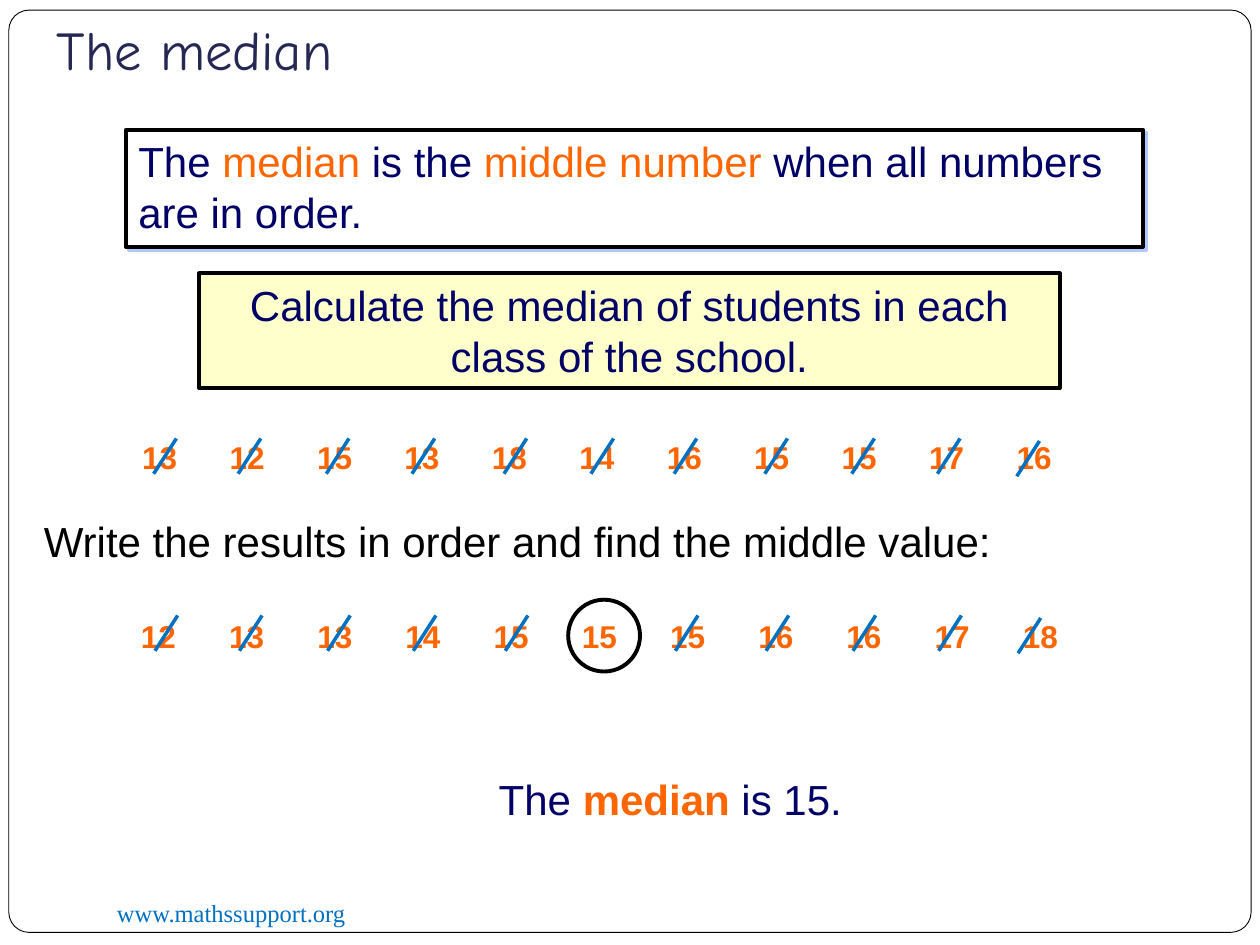
from dataclasses import dataclass
from typing import NamedTuple

from lxml import etree
from pptx import Presentation
from pptx import util as u
from pptx.dml import color
from pptx.enum import shapes, text
from pptx.oxml import ns

COLS, ROWS = 100, 75
WIDE, HIGH = u.Inches(10), u.Inches(7.5)


@dataclass(frozen=True)
class Theme:
    navy: str = "010066"
    orange: str = "FF6600"
    blue: str = "0070C0"
    slate: str = "242852"
    black: str = "000000"
    white: str = "FFFFFF"
    cream: str = "FFFFCC"
    shade: str = "ACCBF9"
    sans: str = "Arial"
    serif: str = "Times New Roman"
    hand: str = "Comic Neue"
    head: float = 31.2
    body: float = 24
    count: float = 18
    foot: float = 14
    edge: float = 2.25
    slash: float = 2
    hair: float = 0.5


T = Theme()


class Box(NamedTuple):
    x: float
    y: float
    w: float
    h: float


class Bit(NamedTuple):
    words: str
    tint: str = T.navy
    size: float = T.body
    face: str = T.sans
    bold: bool = False


class Series(NamedTuple):
    left: float
    top: float
    step: float
    cut: float
    shift: float
    values: tuple


def col(n: float) -> int:
    return round(WIDE * n / COLS)


def row(n: float) -> int:
    return round(HIGH * n / ROWS)


def area(box: Box) -> tuple:
    return col(box.x), row(box.y), col(box.w), row(box.h)


def rgb(tint: str) -> color.RGBColor:
    return color.RGBColor.from_string(tint)


def write(shape, bits: list, align=text.PP_ALIGN.LEFT, wrap: bool = True):
    frame = shape.text_frame
    frame.word_wrap = wrap
    frame.auto_size = text.MSO_AUTO_SIZE.SHAPE_TO_FIT_TEXT
    frame.vertical_anchor = text.MSO_ANCHOR.TOP
    para = frame.paragraphs[0]
    para.alignment = align
    for bit in bits:
        run = para.add_run()
        run.text = bit.words
        font = run.font
        font.name, font.size, font.bold = bit.face, u.Pt(bit.size), bit.bold
        font.color.rgb = rgb(bit.tint)
    return para


def label(slide, box: Box, bits: list, wrap: bool = True):
    return write(slide.shapes.add_textbox(*area(box)), bits, wrap=wrap)


def panel(slide, kind, box: Box, fill: str = "", edge: float = T.edge):
    shape = slide.shapes.add_shape(kind, *area(box))
    shape.shadow.inherit = False
    if fill:
        shape.fill.solid()
        shape.fill.fore_color.rgb = rgb(fill)
    else:
        shape.fill.background()
    shape.line.color.rgb = rgb(T.black)
    shape.line.width = u.Pt(edge)
    return shape


def cast(shape) -> None:
    effect = shape.element.spPr.find(ns.qn("a:effectLst"))
    outer = etree.SubElement(effect, ns.qn("a:outerShdw"), dist=str(u.Pt(2.8)),
                             dir="2700000", algn="ctr", rotWithShape="0")
    etree.SubElement(outer, ns.qn("a:srgbClr"), val=T.shade)


def number(value: str) -> Bit:
    return Bit(value, T.orange, T.count, bold=True)


def tabbed(slide, series: Series) -> None:
    box = Box(series.left, series.top, 74.7, 3.7)
    para = label(slide, box, [number("\t".join(series.values))])
    para.line_spacing = 0.9
    stops = etree.SubElement(para._p.get_or_add_pPr(), ns.qn("a:tabLst"))
    for i in range(1, len(series.values)):
        etree.SubElement(stops, ns.qn("a:tab"), pos=str(col(i * series.step)), algn="l")


def spread(slide, series: Series) -> None:
    for i, value in enumerate(series.values):
        box = Box(series.left + i * series.step, series.top, 5.4, 3.7)
        label(slide, box, [number(value)]).line_spacing = 0.9


def strike(slide, series: Series, keep: int = -1) -> None:
    last = len(CUTS) - 1
    for i, cut in enumerate(CUTS):
        if i == keep:
            continue
        x = cut + series.shift
        y = series.cut + (0.2 if i == last else 0)
        line = slide.shapes.add_connector(shapes.MSO_CONNECTOR.STRAIGHT, col(x + 1.8),
                                          row(y), col(x), row(y + 2.8))
        line.line.color.rgb = rgb(T.blue)
        line.line.width = u.Pt(T.slash)
        etree.SubElement(line.element.spPr, ns.qn("a:effectLst"))


CUTS = (12.2, 18.9, 25.9, 32.7, 40, 46.9, 53.5, 60.7, 67.6, 74.4, 80.7)
RAW = Series(10.3, 34.6, 6.94, 34.8, 0,
             ("13", "12", "15", "13", "18", "14", "16", "15", "15", "17", "16"))
SORTED = Series(10.2, 48.8, 7, 48.85, 0.1, tuple(sorted(RAW.values)))
MIDDLE = len(RAW.values) // 2


def main() -> None:
    deck = Presentation()
    deck.slide_width, deck.slide_height = WIDE, HIGH
    slide = deck.slides.add_slide(deck.slide_layouts[5])
    kinds = shapes.MSO_SHAPE

    title = slide.shapes.title
    title.left, title.top, title.width, title.height = area(Box(3.5, 0.8, 40, 6.7))
    write(title, [Bit("The median", T.slate, T.head, T.hand)])
    title.text_frame.auto_size = text.MSO_AUTO_SIZE.NONE
    title.text_frame.vertical_anchor = text.MSO_ANCHOR.MIDDLE
    title.text_frame.margin_bottom = u.Inches(0.1)

    border = panel(slide, kinds.ROUNDED_RECTANGLE, Box(0.7, 0.8, 98.6, 73.2),
                   T.white, T.hair)
    border.adjustments[0] = 0.022
    title.element.addprevious(border.element)
    label(slide, Box(8.3, 70.8, 32.5, 3.4),
          [Bit("www.mathssupport.org", T.blue, T.foot, T.serif)])

    rule = panel(slide, kinds.RECTANGLE, Box(10, 10.3, 80.7, 9.3), T.white)
    cast(rule)
    write(rule, [Bit("The "), Bit("median", T.orange), Bit(" is the "),
                 Bit("middle number ", T.orange),
                 Bit("when all numbers are in order.")])
    task = panel(slide, kinds.RECTANGLE, Box(15.8, 21.7, 68.3, 9.1), T.cream)
    write(task, [Bit("Calculate the median of students in each class of the school.")],
          text.PP_ALIGN.CENTER)

    panel(slide, kinds.OVAL, Box(45.1, 47.6, 5.7, 5.7))
    label(slide, Box(2.5, 40.4, 77.3, 5),
          [Bit("Write the results in order and find the middle value:", T.black)],
          wrap=False)

    tabbed(slide, RAW)
    spread(slide, SORTED)
    strike(slide, RAW)
    strike(slide, SORTED, MIDDLE)
    label(slide, Box(38.6, 60.9, 30.8, 5),
          [Bit("The "), Bit("median ", T.orange, bold=True), Bit("is 15.")])
    deck.save("out.pptx")


if __name__ == "__main__":
    main()
